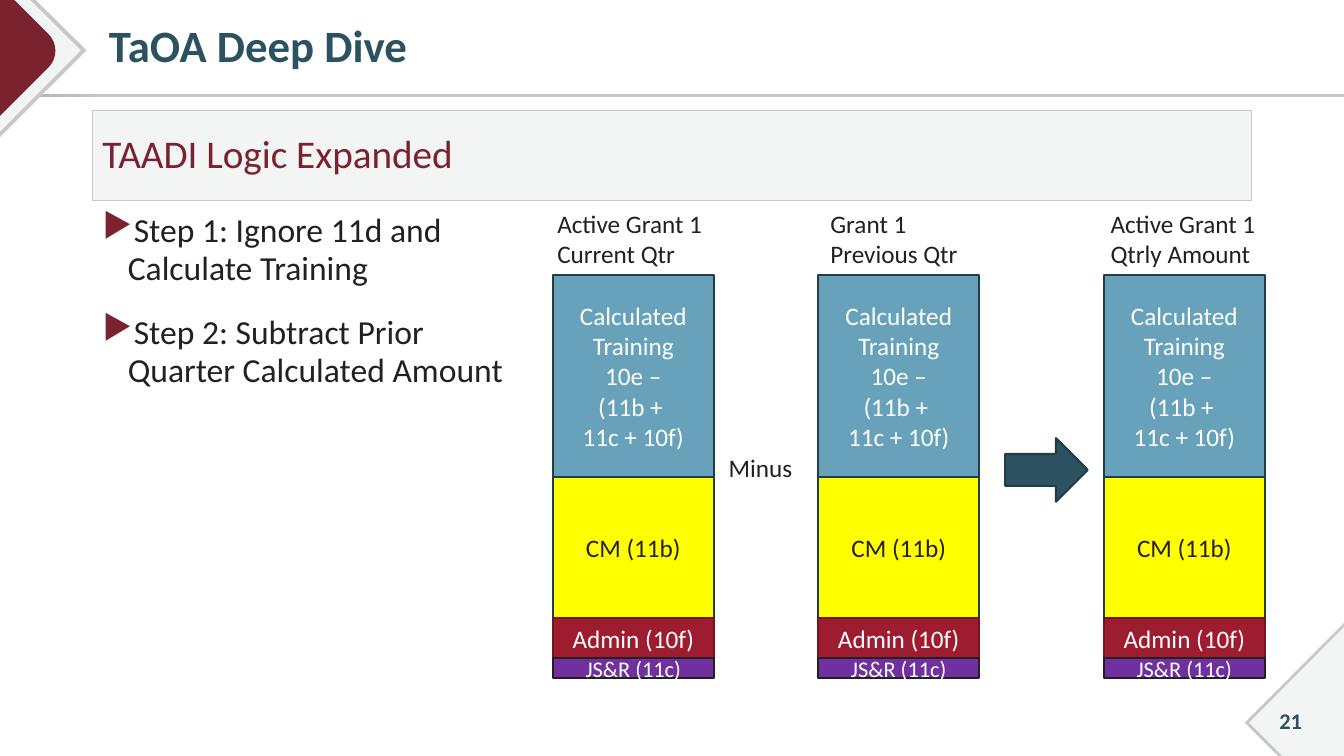
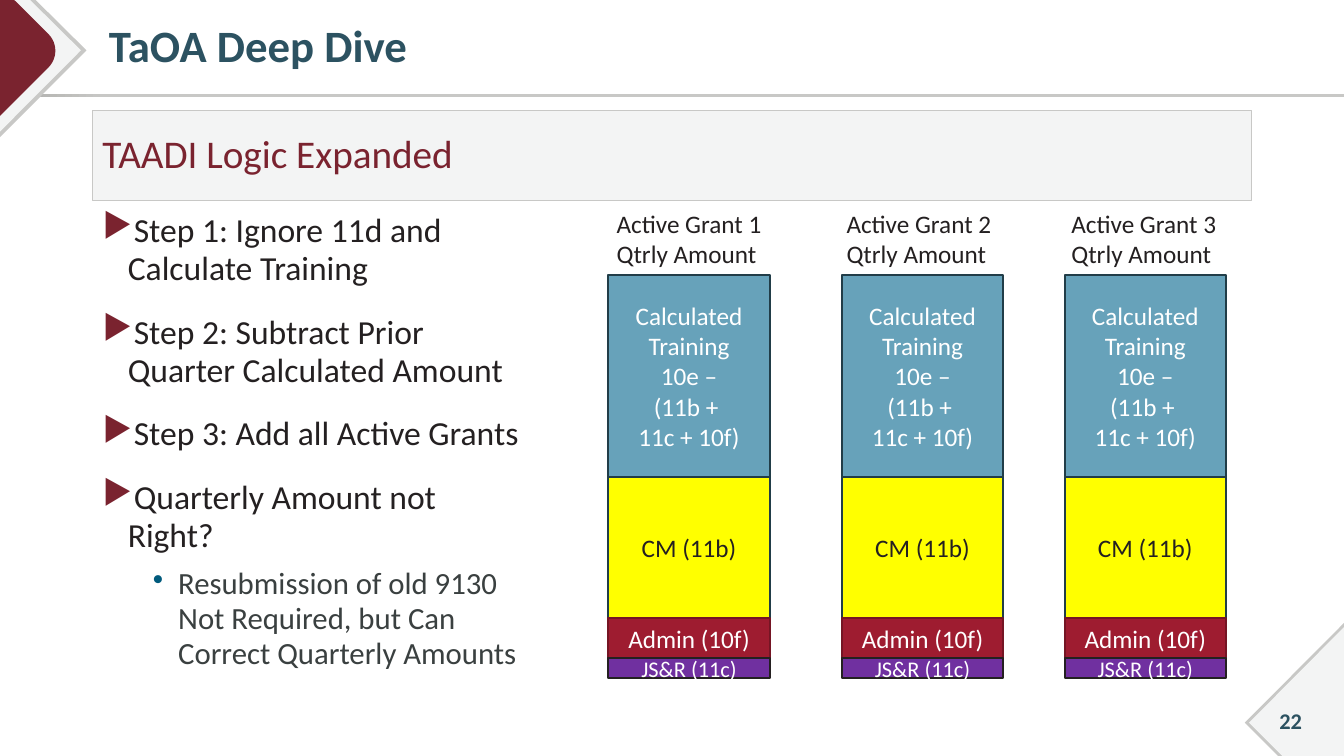
from lxml import etree
from pptx import Presentation
from pptx import util as u
from pptx.dml.color import RGBColor
from pptx.enum import shapes, text
from pptx.oxml import ns

FONT = "Calibri"
COLORS = {
    "navy": "2C5261", "navy_edge": "213D48", "maroon": "7A232F",
    "ink": "242021", "slate": "3A4040", "white": "FFFFFF",
    "pale": "F3F4F4", "silver": "C8C8C6", "gray": "ABABA8",
    "steel": "67A2BA", "yellow": "FFFF00", "red": "9E1C30",
    "red_edge": "751524", "purple": "7030A0", "bullet_blue": "005A7C",
}
WIDTH, HEIGHT = 960, 540
STACK_TOP, STACK_WIDTH = 196.5, 115.2
LABEL_TOP, LABEL_HEIGHT = 145, 51
LAYERS = [
    (["Calculated Training", "10e –", "(11b + ", "11c + 10f)"],
     144, "steel", "navy_edge", "white", 18),
    (["CM (11b)"], 100.8, "yellow", "navy_edge", "ink", 18),
    (["Admin (10f)"], 28.8, "red", "red_edge", "white", 18),
    (["JS&R (11c)"], 14.4, "purple", "ink", "white", 16),
]
STEPS = [
    "Step 1: Ignore 11d and Calculate Training",
    "Step 2: Subtract Prior Quarter Calculated Amount",
    "Step 3: Add all Active Grants",
    "Quarterly Amount not Right?",
]
RESUBMISSION = "Resubmission of old 9130 Not Required, but Can Correct Quarterly Amounts"


def color(name):
    return RGBColor.from_string(COLORS[name])


def place(box, left, top, width, height):
    box.left, box.top = u.Pt(left), u.Pt(top)
    box.width, box.height = u.Pt(width), u.Pt(height)


def paint(shape, fill, line=None, weight=1.5):
    shape.shadow.inherit = False
    shape.fill.solid()
    shape.fill.fore_color.rgb = color(fill)
    if line:
        shape.line.color.rgb = color(line)
        shape.line.width = u.Pt(weight)
    else:
        shape.line.fill.background()


def add_bullet(para, symbol, tint, indent):
    properties = para._p.get_or_add_pPr()
    properties.set("marL", str(u.Pt(indent)))
    properties.set("indent", str(u.Pt(-18)))
    holder = etree.SubElement(properties, ns.qn("a:buClr"))
    etree.SubElement(holder, ns.qn("a:srgbClr"), val=COLORS[tint])
    etree.SubElement(properties, ns.qn("a:buChar"), char=symbol)


def write(box, lines, size=18, tint="ink", bold=False, align="LEFT",
          anchor="TOP", wrap=True, spacing=None, before=0, bullet=None, level=0):
    frame = box.text_frame
    frame.word_wrap = wrap
    frame.auto_size = text.MSO_AUTO_SIZE.NONE
    frame.vertical_anchor = getattr(text.MSO_ANCHOR, anchor)
    for line in lines:
        first = not frame.text
        para = frame.paragraphs[0] if first else frame.add_paragraph()
        para.level = level
        if bullet:
            add_bullet(para, *bullet)
        para.alignment = getattr(text.PP_ALIGN, align)
        if spacing:
            para.line_spacing = spacing
        if before and not first:
            para.space_before = u.Pt(before)
        span = para.add_run()
        span.text = line
        span.font.name = FONT
        span.font.size = u.Pt(size)
        span.font.bold = bold
        span.font.color.rgb = color(tint)


def add_text(page, lines, left, top, width, height, **style):
    box = page.shapes.add_textbox(*map(u.Pt, (left, top, width, height)))
    write(box, lines, **style)
    return box


def add_block(page, left, top, width, height, fill, line=None, weight=1.5,
              kind=shapes.MSO_SHAPE.RECTANGLE):
    block = page.shapes.add_shape(kind, *map(u.Pt, (left, top, width, height)))
    paint(block, fill, line, weight)
    return block


def add_outline(page, points, fill):
    corners = [(u.Pt(x), u.Pt(y)) for x, y in points]
    builder = page.shapes.build_freeform(*corners[0], scale=1.0)
    builder.add_line_segments(corners[1:], close=True)
    paint(builder.convert_to_shape(), fill)


def curve(start, pull_start, pull_end, end, steps=12):
    points = []
    for step in range(steps + 1):
        t = step / steps
        weights = ((1 - t) ** 3, 3 * t * (1 - t) ** 2, 3 * t * t * (1 - t), t ** 3)
        corners = (start, pull_start, pull_end, end)
        points.append(tuple(sum(w * c[axis] for w, c in zip(weights, corners))
                            for axis in (0, 1)))
    return points


def add_frame(page, number):
    rule = add_block(page, 0, 67, WIDTH, 2.2, "silver")
    rule.fill.gradient()
    rule.fill.gradient_angle = 0
    for stop, tint, position in zip(rule.fill.gradient_stops, ("gray", "silver"), (0, 0.08)):
        stop.color.rgb = color(tint)
        stop.position = position
    for fill, inset in (("silver", 0), ("pale", 4)):
        add_outline(page, [(0, 0), (25.5 - inset, 0), (61.8 - inset, 36),
                           (0, 98 - inset)], fill)
    nose = curve((34.6, 24.3), (41.2, 30.9), (41.2, 41.6), (34.6, 48.2))
    add_outline(page, [(0, 0), (10.2, 0), *nose, (0, 82.8)], "maroon")
    for fill, inset in (("silver", 0), ("pale", 3)):
        add_outline(page, [(WIDTH, 445 + inset), (WIDTH, HEIGHT),
                           (913 + inset, HEIGHT), (889.2 + inset, 516.2)], fill)
    add_text(page, [str(number)], 896.4, 500.4, 51, 28.8, size=16, tint="navy",
             bold=True, align="CENTER", anchor="MIDDLE")


def add_page(deck, number, title, heading):
    page = deck.slides.add_slide(deck.slide_layouts[5])
    add_frame(page, number)
    place(page.shapes.title, 63.4, 3.6, 872.6, 62)
    page.shapes.title.text_frame.margin_left = u.Pt(14.4)
    write(page.shapes.title, [title], size=32, tint="navy", bold=True,
          anchor="MIDDLE", spacing=0.9)
    band = add_block(page, 66, 78.7, 828, 64.6, "pale", "silver", 0.75)
    write(band, [heading], size=28, tint="maroon", anchor="MIDDLE", spacing=0.95)
    return page


def add_steps(page, steps, notes=()):
    box = add_text(page, steps, 66.2, 147.6, 316.1, 330.5, size=24, spacing=0.95,
                   before=18, bullet=("▶", "maroon", 18))
    write(box, notes, size=22, tint="slate", spacing=0.95, before=8,
          bullet=("•", "bullet_blue", 54), level=1)


def add_stack(page, left, label, label_left, label_width=119.5):
    add_text(page, label, label_left, LABEL_TOP, label_width, LABEL_HEIGHT, wrap=False)
    top = STACK_TOP
    for lines, height, fill, line, tint, size in LAYERS:
        block = add_block(page, left, top, STACK_WIDTH, height, fill, line)
        write(block, lines, size=size, tint=tint, align="CENTER", anchor="MIDDLE")
        top += height


def main():
    deck = Presentation()
    deck.slide_width, deck.slide_height = u.Pt(WIDTH), u.Pt(HEIGHT)
    title, heading = "TaOA Deep Dive", "TAADI Logic Expanded"

    subtraction = add_page(deck, 21, title, heading)
    add_steps(subtraction, STEPS[:2])
    add_stack(subtraction, 394.8, ["Active Grant 1", "Current Qtr"], 391)
    add_text(subtraction, ["Minus"], 513.4, 319.7, 60.5, 28.8, wrap=False)
    add_stack(subtraction, 584.4, ["Grant 1", "Previous Qtr"], 586, 106.6)
    add_block(subtraction, 718, 313, 59, 45.4, "navy", "navy_edge",
              kind=shapes.MSO_SHAPE.RIGHT_ARROW)
    add_stack(subtraction, 788.4, ["Active Grant 1", "Qtrly Amount"], 786.2)

    addition = add_page(deck, 22, title, heading)
    add_steps(addition, STEPS, [RESUBMISSION])
    places = ((434.6, 433.4), (601.4, 597.6), (760.5, 758.2))
    for grant, (left, label_left) in enumerate(places, 1):
        add_stack(addition, left, [f"Active Grant {grant}", "Qtrly Amount"], label_left)

    deck.save("out.pptx")


if __name__ == "__main__":
    main()
